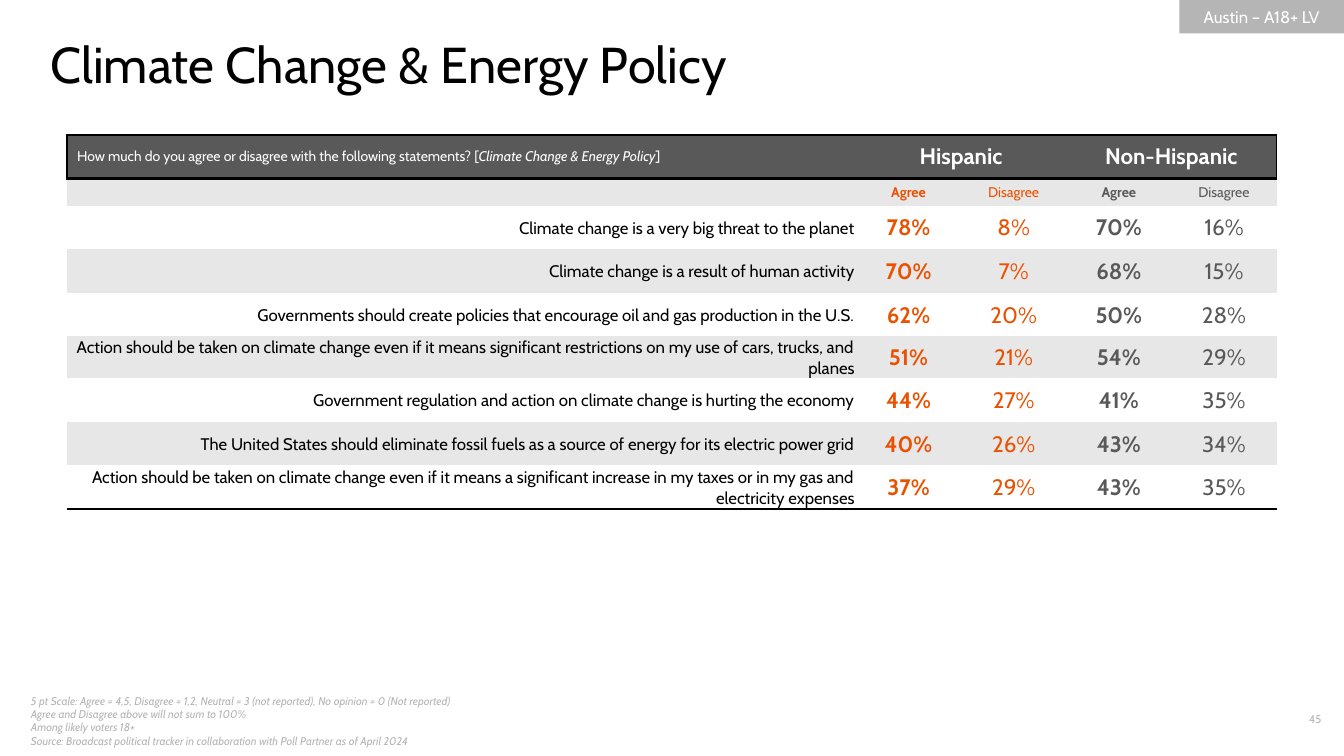
from lxml import etree
from pptx import Presentation
from pptx.dml.color import RGBColor
from pptx.enum.shapes import MSO_SHAPE
from pptx.enum.text import MSO_ANCHOR, PP_ALIGN
from pptx.oxml.ns import qn
from pptx.util import Cm, Pt

BLACK = RGBColor(0x00, 0x00, 0x00)
WHITE = RGBColor(0xFF, 0xFF, 0xFF)
DARK_GRAY = RGBColor(0x59, 0x59, 0x59)
MID_GRAY = RGBColor(0xB5, 0xB5, 0xB5)
PALE_GRAY = RGBColor(0xE7, 0xE7, 0xE7)
ORANGE = RGBColor(0xEA, 0x51, 0x01)

LEFT, CENTER, RIGHT = PP_ALIGN.LEFT, PP_ALIGN.CENTER, PP_ALIGN.RIGHT
TOP, MIDDLE = MSO_ANCHOR.TOP, MSO_ANCHOR.MIDDLE
RECTANGLE = MSO_SHAPE.RECTANGLE

FONT = "Cabin"
THICK, THIN = 2.25, 1

QUESTION = [
    ("How much do you agree or disagree with the following statements? [", {}),
    ("Climate Change & Energy Policy", {"italic": True}),
    ("]", {}),
]
GROUPS = [("Hispanic", ORANGE), ("Non-Hispanic", DARK_GRAY)]
ANSWERS = [("Agree", True), ("Disagree", False)]
STATEMENTS = [
    ("Climate change is a very big threat to the planet", (78, 8, 70, 16)),
    ("Climate change is a result of human activity", (70, 7, 68, 15)),
    ("Governments should create policies that encourage oil and gas production in the U.S.",
     (62, 20, 50, 28)),
    ("Action should be taken on climate change even if it means significant restrictions "
     "on my use of cars, trucks, and planes", (51, 21, 54, 29)),
    ("Government regulation and action on climate change is hurting the economy",
     (44, 27, 41, 35)),
    ("The United States should eliminate fossil fuels as a source of energy for its "
     "electric power grid", (40, 26, 43, 34)),
    ("Action should be taken on climate change even if it means a significant increase "
     "in my taxes or in my gas and electricity expenses", (37, 29, 43, 35)),
]
FOOTNOTES = [
    "5 pt Scale: Agree = 4,5, Disagree = 1,2, Neutral = 3 (not reported), "
    "No opinion = 0 (Not reported)",
    "Agree and Disagree above will not sum to 100%",
    "Among likely voters 18+\n"
    "Source: Broadcast political tracker in collaboration with Poll Partner as of April 2024",
]


def add_runs(paragraph, pieces, size, color, align=LEFT, **style):
    """Write (text, style) pieces; a newline becomes a line break."""
    paragraph.alignment = align
    for text, own_style in pieces:
        for number, line in enumerate(text.split("\n")):
            if number:
                paragraph.add_line_break()
            run = paragraph.add_run()
            run.text = line
            run.font.color.rgb = color
            values = {"name": FONT, "size": Pt(size), **style, **own_style}
            for name, value in values.items():
                setattr(run.font, name, value)


def add_text(slide, box, lines, size, color, align=LEFT, anchor=TOP, margins=None, **style):
    frame = slide.shapes.add_textbox(*map(Cm, box)).text_frame
    frame.word_wrap = True
    frame.vertical_anchor = anchor
    for side, margin in (margins or {}).items():
        setattr(frame, "margin_" + side, margin)
    for number, line in enumerate(lines):
        paragraph = frame.add_paragraph() if number else frame.paragraphs[0]
        add_runs(paragraph, [(line, {})], size, color, align, **style)


def add_audience_tag(slide, box):
    shape = slide.shapes.add_shape(RECTANGLE, *map(Cm, box))
    shape.shadow.inherit = False
    shape.fill.solid()
    shape.fill.fore_color.rgb = MID_GRAY
    shape.line.fill.background()
    shape.text_frame.vertical_anchor = MIDDLE
    add_runs(shape.text_frame.paragraphs[0], [("Austin – A18+ LV", {})], 12, WHITE, CENTER)


def format_cell(cell, fill, borders):
    """Set all four borders (absent ones are cleared), then the fill."""
    properties = cell._tc.get_or_add_tcPr()
    for side in "LRTB":
        width = borders.get(side, 0)
        line = etree.SubElement(properties, qn("a:ln" + side), w=str(Pt(width)))
        if width:
            solid = etree.SubElement(line, qn("a:solidFill"))
            etree.SubElement(solid, qn("a:srgbClr"), val=str(BLACK))
        else:
            etree.SubElement(line, qn("a:noFill"))
    cell.vertical_anchor = MIDDLE
    cell.fill.solid()
    cell.fill.fore_color.rgb = fill


def add_opinion_table(slide, box):
    left, top, width, height = box
    value_width = 2.65
    value_count = len(GROUPS) * len(ANSWERS)
    row_heights = [1.1, 0.65, 1.1, 1.1, 1.1, 1.04, 1.1, 1.1, 1.1]
    last_row, last_column = len(row_heights) - 1, value_count
    table = slide.shapes.add_table(
        last_row + 1, last_column + 1, Cm(left), Cm(top), Cm(width), Cm(height)).table
    table.columns[0].width = Cm(width - value_count * value_width)
    for column in range(1, last_column + 1):
        table.columns[column].width = Cm(value_width)

    # Fills, rules and margins
    for row, row_height in enumerate(row_heights):
        table.rows[row].height = Cm(row_height)
        for column in range(last_column + 1):
            cell = table.cell(row, column)
            borders = {}
            if row < 2:
                borders["T"] = THICK
            if row in (0, last_row):
                borders["B"] = THICK
            if row == 0 and column == 0:
                borders["L"] = THIN
            if row == 0 and column >= last_column - 1:
                borders["R"] = THIN
            fill = DARK_GRAY if row == 0 else PALE_GRAY if row % 2 else WHITE
            format_cell(cell, fill, borders)
            if row > 1:
                cell.margin_left = cell.margin_right = cell.margin_top = Cm(0.03)
                cell.margin_bottom = 0

    def write(row, column, pieces, *look, **style):
        add_runs(table.cell(row, column).text_frame.paragraphs[0], pieces, *look, **style)

    # Header rows
    write(0, 0, QUESTION, 10, WHITE)
    empty_paragraph = table.cell(1, 0).text_frame.paragraphs[0]
    etree.SubElement(empty_paragraph._p, qn("a:endParaRPr"), sz="1000")
    value_looks = []
    for group, color in GROUPS:
        first = 1 + len(value_looks)
        table.cell(0, first).merge(table.cell(0, first + 1))
        write(0, first, [(group, {})], 16, WHITE, CENTER, bold=True)
        for answer, bold in ANSWERS:
            value_looks.append((color, bold))
            write(1, len(value_looks), [(answer, {})], 10, color, CENTER, bold=bold)

    # Statements and shares
    for row, (statement, shares) in enumerate(STATEMENTS, 2):
        write(row, 0, [(statement, {})], 12, BLACK, RIGHT)
        for column, (share, (color, bold)) in enumerate(zip(shares, value_looks), 1):
            write(row, column, [(f"{share}%", {})], 16, color, CENTER, bold=bold)


def add_footer(slide, box):
    left, top, width, height = box
    number_width = 2.24
    add_text(slide, (left, top, 12.98, height), FOOTNOTES, 8, MID_GRAY,
             anchor=MIDDLE, italic=True)
    add_text(slide, (left + width - number_width, top + 0.18, number_width, 0.69),
             ["45"], 8, MID_GRAY, RIGHT)


def main():
    presentation = Presentation()
    presentation.slide_width, presentation.slide_height = Cm(33.87), Cm(19.05)
    slide = presentation.slides.add_slide(presentation.slide_layouts[6])
    add_footer(slide, (0.53, 17.65, 33.02, 1.02))
    add_audience_tag(slide, (29.72, 0, 4.15, 0.84))
    add_text(slide, (1.27, 0.84, 30.48, 1.55), ["Climate Change & Energy Policy"], 36, BLACK,
             margins=dict.fromkeys(("left", "top", "right", "bottom"), 0))
    add_opinion_table(slide, (1.69, 3.4, 30.48, 9.39))
    presentation.save("out.pptx")


if __name__ == "__main__":
    main()
